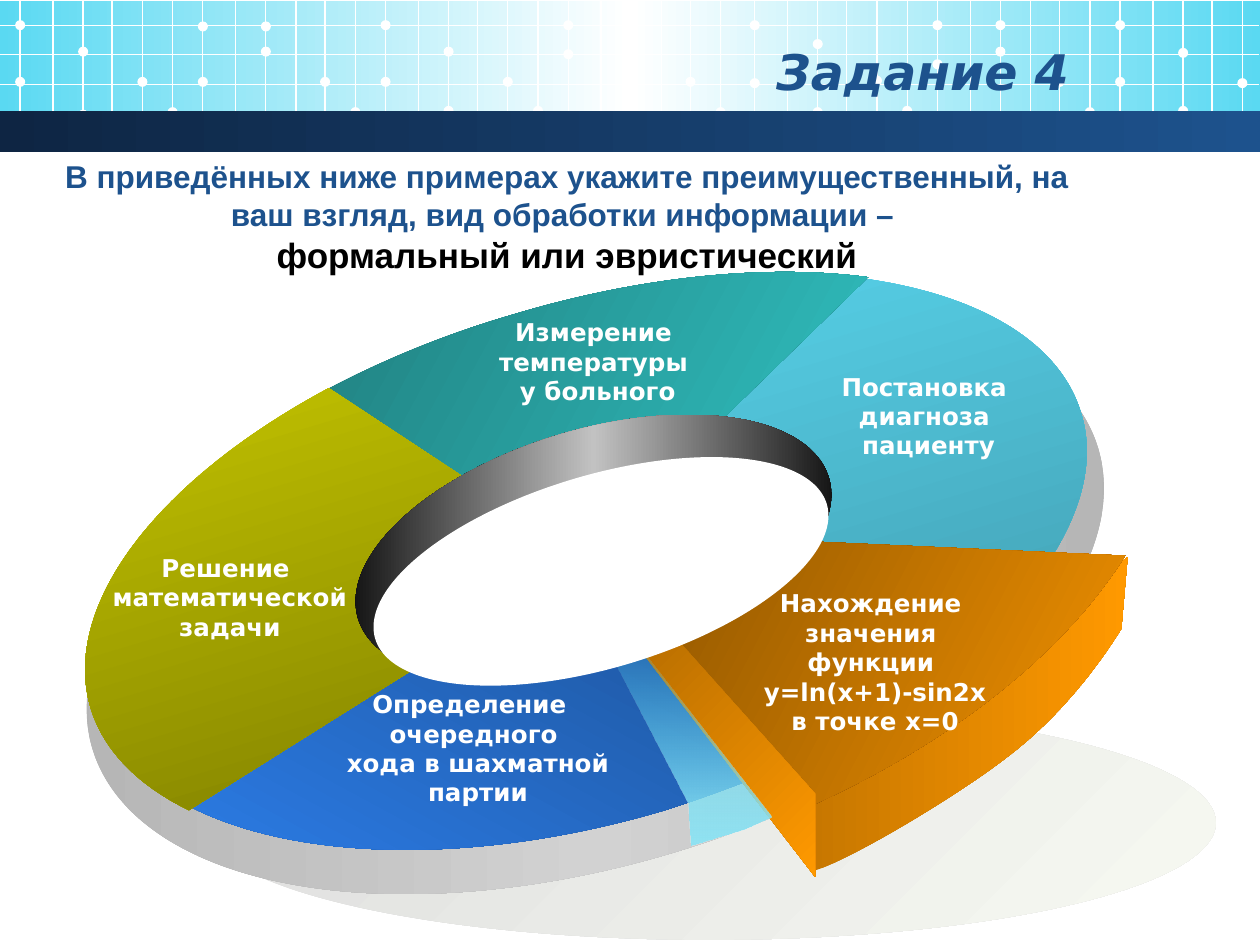
import math
from dataclasses import dataclass

from lxml import etree
from pptx import Presentation
from pptx import util as u
from pptx.dml.color import RGBColor
from pptx.enum import shapes, text
from pptx.oxml.ns import qn


@dataclass(frozen=True)
class Theme:
    white: str = "FFFFFF"
    black: str = "000000"
    navy: str = "1D528D"
    band: tuple = ("0E2543", "1D528D")
    sky: tuple = ("5AD9F2", "FFFFFF", "5AD9F2")
    shadow: tuple = ("DDDDDD", "F7F9F2")
    rim: tuple = ("B2B2B2", "D2D2D2", "B2B2B2")
    base: tuple = ("2791BB", "000000")
    inner_wall: tuple = ("000000", "C2C2C2", "000000")
    cyan: tuple = ("5AD9F2", "419CAE")
    blue: tuple = ("1C5094", "2F85F7")
    teal: tuple = ("1F7A7A", "33CCCC")
    olive: tuple = ("CCCC00", "7A7A00")
    orange: tuple = ("7A4900", "FF9900")
    orange_outer: tuple = ("C77700", "FF9900")
    orange_cut: tuple = ("B36B00", "FF9900")
    glass: tuple = ("5AD9F2", "8FE3F3")
    display: str = "DejaVu Sans"
    body: str = "Arial"
    title_size: int = 28
    result_size: int = 20
    task_size: int = 18
    label_size: int = 14


THEME = Theme()
TILT = 343.4
LEVEL = 360 - TILT


def add_text(frame, content, first=True, font=THEME.display, size=THEME.label_size,
             color=THEME.white, align=text.PP_ALIGN.CENTER, italic=False):
    paragraph = frame.paragraphs[0] if first else frame.add_paragraph()
    paragraph.alignment = align
    run = paragraph.add_run()
    run.text = content
    run.font.name = font
    run.font.size = u.Pt(size)
    run.font.bold = True
    run.font.italic = italic
    run.font.color.rgb = RGBColor.from_string(color)


def flatten(outline, steps=24):
    points = [outline[0][0]]
    for part in outline[1:]:
        if len(part) == 1:
            points.append(part[0])
            continue
        controls = (points[-1], *part)
        for step in range(1, steps + 1):
            t = step / steps
            weights = [math.comb(3, i) * t**i * (1 - t)**(3 - i) for i in range(4)]
            points.append(tuple(round(sum(w * c[axis] for w, c in zip(weights, controls)))
                                for axis in (0, 1)))
    return points


def turn(point, degrees):
    angle = math.radians(degrees)
    x, y = point
    return (x * math.cos(angle) - y * math.sin(angle),
            x * math.sin(angle) + y * math.cos(angle))


class SlideBuilder:
    def __init__(self, theme, slide):
        self.theme = theme
        self.slide = slide

    def paint(self, shape, colors, angle=0, first_alpha=None):
        shape.shadow.inherit = False
        shape.line.fill.background()
        if isinstance(colors, str):
            shape.fill.solid()
            shape.fill.fore_color.rgb = RGBColor.from_string(colors)
            return
        shape.fill.gradient()
        shape.fill.gradient_angle = -angle % 360
        stops = shape.element.spPr.find(qn("a:gradFill")).find(qn("a:gsLst"))
        for stop in list(stops):
            stops.remove(stop)
        for index, color in enumerate(colors):
            position = index * 100000 // (len(colors) - 1)
            stop = etree.SubElement(stops, qn("a:gs"), pos=str(position))
            value = etree.SubElement(stop, qn("a:srgbClr"), val=color)
            if first_alpha and index == 0:
                etree.SubElement(value, qn("a:alpha"), val=str(first_alpha * 1000))

    def preset(self, kind, box, colors, angle=0, rotation=0):
        shape = self.slide.shapes.add_shape(kind, *map(u.Inches, box))
        shape.rotation = rotation
        self.paint(shape, colors, angle)

    def rect(self, box, colors):
        self.preset(shapes.MSO_SHAPE.RECTANGLE, box, colors)

    def ellipse(self, box, colors, angle=0, rotation=0):
        self.preset(shapes.MSO_SHAPE.OVAL, box, colors, angle, rotation)

    def line(self, *ends):
        connector = self.slide.shapes.add_connector(
            shapes.MSO_CONNECTOR.STRAIGHT, *map(u.Inches, ends))
        connector.line.color.rgb = RGBColor.from_string(self.theme.white)
        connector.line.width = u.Pt(0.75)
        etree.SubElement(connector.element.spPr, qn("a:effectLst"))

    def outline(self, parts, colors, angle=0, rotation=0, first_alpha=None):
        level = [[tuple(u.Inches(v) for v in turn(part[i:i + 2], -rotation))
                  for i in range(0, len(part), 2)] for part in parts]
        points = flatten(level)
        builder = self.slide.shapes.build_freeform(*points[0])
        builder.add_line_segments(points[1:], close=True)
        shape = builder.convert_to_shape()
        self.curve(shape, level)
        center = (shape.left + shape.width / 2, shape.top + shape.height / 2)
        x, y = turn(center, rotation)
        shape.left, shape.top = round(x - shape.width / 2), round(y - shape.height / 2)
        shape.rotation = rotation
        self.paint(shape, colors, angle, first_alpha)

    def curve(self, shape, parts):
        contour = next(shape.element.iter(qn("a:path")))
        for segment in list(contour):
            contour.remove(segment)
        for index, part in enumerate(parts):
            tag = "a:moveTo" if index == 0 else "a:lnTo" if len(part) == 1 else "a:cubicBezTo"
            segment = etree.SubElement(contour, qn(tag))
            for x, y in part:
                etree.SubElement(segment, qn("a:pt"),
                                 x=str(x - shape.left), y=str(y - shape.top))
        etree.SubElement(contour, qn("a:close"))

    def text_box(self, box, wrap=True, anchor=text.MSO_ANCHOR.TOP, grow=True):
        frame = self.slide.shapes.add_textbox(*map(u.Inches, box)).text_frame
        frame.word_wrap = wrap
        frame.vertical_anchor = anchor
        if grow:
            frame.auto_size = text.MSO_AUTO_SIZE.SHAPE_TO_FIT_TEXT
        return frame

    def label(self, box, lines, wrap=False):
        frame = self.text_box(box, wrap)
        for index, content in enumerate(lines):
            add_text(frame, content, first=index == 0)


def draw_header(page):
    page.rect((0, 0.01, 10, 1.02), THEME.sky)
    line_offsets = (0, .26, .5, .73, .97, 1.21, 1.45, 1.71, 1.95, 2.19, 2.42, 2.66)
    dot_offsets = (-.04, -.04, .46, .46, .93, 1.17, 1.41, 1.41, 1.91, 1.91, 2.38, 2.62)
    tiles = (
        (0.16, 12, (.61, .16, .37, .87, .61, .85, .61, .17, .37, .17, .61, .85)),
        (3.06, 12, (.61, .16, .37, .84, .61, .84, .39, .16, .38, .16, .61, .85)),
        (5.99, 12, (.62, .16, .31, .85, .6, .84, .47, .16, .37, .16, .61, .85)),
        (8.89, 5, (.61, .16, .38, .84, .62)),
    )
    for left, line_count, dot_tops in tiles:
        for offset, top in zip(dot_offsets, dot_tops):
            page.ellipse((left + offset, top, 0.08, 0.08), THEME.white)
        for offset in line_offsets[:line_count]:
            page.line(left + offset, 0, left + offset, 1.1)
    for y in (0.2, 0.43, 0.67, 0.89):
        page.line(-0.01, y, 9.99, y)
    page.rect((0, 0.88, 10, 0.33), THEME.band)


def draw_ring(page):
    page.ellipse((1.61, 5.6, 8.04, 1.86), THEME.shadow, 45)
    page.ellipse((0.56, 2.64, 8.33, 4.22), THEME.rim, LEVEL, TILT)
    page.ellipse((0.65, 2.41, 8.04, 4.09), THEME.base, 45, TILT)
    page.outline([(6.58, 2.18), (7.66, 2.27, 8.4, 2.67, 8.58, 3.28),
                  (8.7, 3.66, 8.58, 4.11, 8.25, 4.56), (4.64, 4.46)], THEME.cyan, 90, TILT)
    page.outline([(0.87, 5.83), (1.4, 6.76, 3.29, 7.02, 5.28, 6.43),
                  (5.5, 6.36, 5.72, 6.28, 5.93, 6.2), (4.68, 4.44)], THEME.blue, 135, TILT)
    page.outline([(2.33, 3.24), (2.84, 2.94, 3.44, 2.68, 4.06, 2.5),
                  (5.05, 2.2, 6.07, 2.09, 6.89, 2.2), (4.63, 4.4)], THEME.teal, 45, TILT)
    page.outline([(2.61, 3.08), (1.23, 3.82, 0.48, 4.82, 0.72, 5.62),
                  (0.82, 5.95, 1.09, 6.23, 1.5, 6.43), (4.67, 4.44)], THEME.olive, 90, TILT)
    page.outline([(6.44, 6.39), (8.95, 4.42), (8.9, 4.99),
                  (8.74, 5.25, 8.44, 5.66, 8.03, 5.98), (7.63, 6.3, 6.72, 6.84, 6.46, 6.91),
                  (6.42, 6.72, 6.44, 6.39, 6.44, 6.39)], THEME.orange_outer)
    page.outline([(8.93, 4.41), (8.43, 5.21, 7.48, 5.95, 6.29, 6.46), (4.73, 4.22)],
                 THEME.orange, 45, 342.3)
    page.outline([(6.47, 6.3), (6.47, 6.96), (4.99, 5.04), (5.21, 4.89)], THEME.orange_cut, 45)
    page.ellipse((2.76, 3.41, 3.9, 1.88), THEME.inner_wall, LEVEL, TILT)


def draw_labels(page):
    page.label((0.46, 4.34, 2.73, 1.03), ("Решение ", "математической", "задачи"))
    page.label((3.58, 2.47, 2.33, 1.03), ("Измерение ", "температуры ", "у больного"))
    page.label((5.64, 4.62, 2.61, 1.28), ("Нахождение ", "значения ", "функции ",
                                          "y=ln(x+1)-sin2x", "в точке x=0"), wrap=True)
    page.label((6.57, 2.9, 1.6, 0.81), ("Постановка ", "диагноза ", "пациенту"))
    page.label((2.21, 5.42, 3.1, 1.34), ("Определение ", "очередного",
                                         " хода в шахматной", " партии"))


def draw_headings(page):
    title = page.text_box((0.5, 0.25, 8.08, 0.62), anchor=text.MSO_ANCHOR.MIDDLE, grow=False)
    add_text(title, "Задание 4", size=THEME.title_size, color=THEME.navy,
             align=text.PP_ALIGN.RIGHT, italic=True)
    task = page.text_box((0.17, 1.2, 8.66, 1.08))
    add_text(task, "В приведённых ниже примерах укажите преимущественный, на ваш взгляд, "
             "вид обработки информации – ", font=THEME.body, size=THEME.task_size,
             color=THEME.navy)
    add_text(task, "формальный или эвристический", first=False, font=THEME.body,
             size=THEME.result_size, color=THEME.black)


def main():
    deck = Presentation()
    deck.slide_width, deck.slide_height = u.Inches(10), u.Inches(7.5)
    page = SlideBuilder(THEME, deck.slides.add_slide(deck.slide_layouts[6]))
    draw_header(page)
    draw_ring(page)
    draw_labels(page)
    page.outline([(4.87, 5.23), (5.46, 6.37), (5.48, 6.71), (5.9, 6.58), (6.12, 6.48),
                  (5.13, 5.2)], THEME.glass, 90, first_alpha=19)
    page.ellipse((2.9, 3.77, 3.74, 1.53), THEME.white, rotation=TILT)
    draw_headings(page)
    deck.save("out.pptx")


if __name__ == "__main__":
    main()
